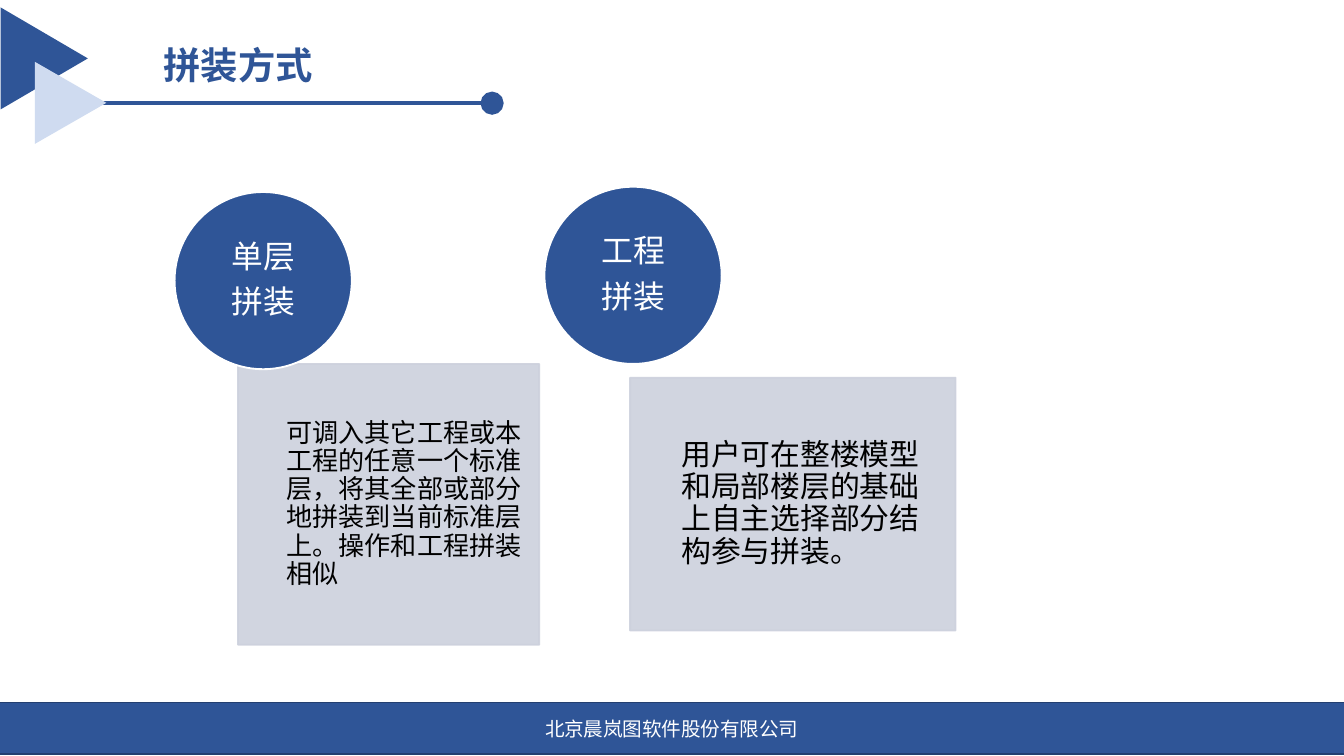
"""Build the slide that compares the two assembly methods."""
from lxml import etree
from pptx import Presentation
from pptx.dml.color import RGBColor
from pptx.enum.shapes import MSO_CONNECTOR, MSO_SHAPE as Preset
from pptx.enum.text import MSO_ANCHOR as Anchor, MSO_AUTO_SIZE, PP_ALIGN as Align
from pptx.oxml.ns import qn
from pptx.util import Cm, Pt

BLUE, PALE_BLUE, GREY = "2F5597", "CFDBF0", "CDD1DD"
WHITE, BLACK, NAVY = "FFFFFF", "000000", "233F70"


def add_shape(preset, box, fill, line=None, opacity=None):
    shape = slide.shapes.add_shape(preset, *[Cm(value) for value in box])
    shape.shadow.inherit = False
    shape.fill.solid()
    shape.fill.fore_color.rgb = RGBColor.from_string(fill)
    if line:
        shape.line.color.rgb = RGBColor.from_string(line)
        shape.line.width = Pt(1)
    else:
        shape.line.fill.background()
    if opacity:
        for color in shape._element.spPr.iter(qn("a:srgbClr")):
            etree.SubElement(color, qn("a:alpha"), val=str(opacity * 1000))
    return shape


def write_text(shape, text, size, color, align=Align.LEFT, anchor=Anchor.MIDDLE,
               bold=False, insets=(0.25, 0.13, 0.25, 0.13), spacing=1, after=0):
    frame = shape.text_frame
    frame.word_wrap = True
    frame.auto_size = MSO_AUTO_SIZE.NONE
    frame.vertical_anchor = anchor
    (frame.margin_left, frame.margin_top,
     frame.margin_right, frame.margin_bottom) = [Cm(inset) for inset in insets]
    frame.text = text
    for paragraph in frame.paragraphs:
        paragraph.alignment = align
        paragraph.line_spacing = spacing
        paragraph.space_before = Pt(0)
        paragraph.space_after = Pt(after)
        for run in paragraph.runs:
            run.font.name = "Arial"
            run.font.size = Pt(size)
            run.font.bold = bold
            run.font.color.rgb = RGBColor.from_string(color)


presentation = Presentation()
presentation.slide_width, presentation.slide_height = Cm(25.4), Cm(14.29)
slide = presentation.slides.add_slide(presentation.slide_layouts[5])

footer = add_shape(Preset.RECTANGLE, (-0.03, 13.28, 25.45, 0.97), BLUE, NAVY)
write_text(footer, "北京晨岚图软件股份有限公司", 10.5, WHITE, Align.CENTER)

large_triangle = add_shape(Preset.ISOSCELES_TRIANGLE, (-0.13, 0.28, 1.93, 1.65), BLUE)
large_triangle.rotation = 90

title_rule = slide.shapes.add_connector(
    MSO_CONNECTOR.STRAIGHT, Cm(1.9), Cm(1.95), Cm(9.3), Cm(1.95))
title_rule.line.color.rgb = RGBColor.from_string(BLUE)
title_rule.line.width = Pt(2.5)
etree.SubElement(title_rule.line._get_or_add_ln(), qn("a:tailEnd"),
                 type="oval", w="lg", len="lg")
etree.SubElement(title_rule._element.spPr, qn("a:effectLst"))

small_triangle = add_shape(Preset.ISOSCELES_TRIANGLE, (0.56, 1.27, 1.55, 1.35), PALE_BLUE)
small_triangle.rotation = 90

title = slide.shapes.title
title.left, title.top, title.width, title.height = Cm(2.84), Cm(0.53), Cm(5), Cm(1.24)
write_text(title, "拼装方式", 20, BLUE, anchor=Anchor.BOTTOM, bold=True)

methods = [
    ("单层\n拼装", (3.3, 3.63), (4.5, 6.88, 5.69, 5.31), 14, (0.91, 0.28, 0.28, 0.28),
     "可调入其它工程或本工程的任意一个标准层，将其全部或部分地拼装到当前标准层上。操作和工程拼装相似"),
    ("工程\n拼装", (10.29, 3.53), (11.91, 7.14, 6.15, 4.78), 16, (0.97, 0.3, 0.3, 0.3),
     "用户可在整楼模型和局部楼层的基础上自主选择部分结构参与拼装。"),
]
for name, corner, card_box, size, insets, description in methods:
    card = add_shape(Preset.RECTANGLE, card_box, GREY, GREY, opacity=90)
    write_text(card, description, size, BLACK, insets=insets,
               spacing=0.9, after=round(size * 0.35))
    circle = add_shape(Preset.OVAL, (*corner, 3.35, 3.35), BLUE, WHITE)
    write_text(circle, name, 17, WHITE, Align.CENTER, insets=(0, 0, 0, 0),
               spacing=0.9, after=6)

presentation.save("out.pptx")
